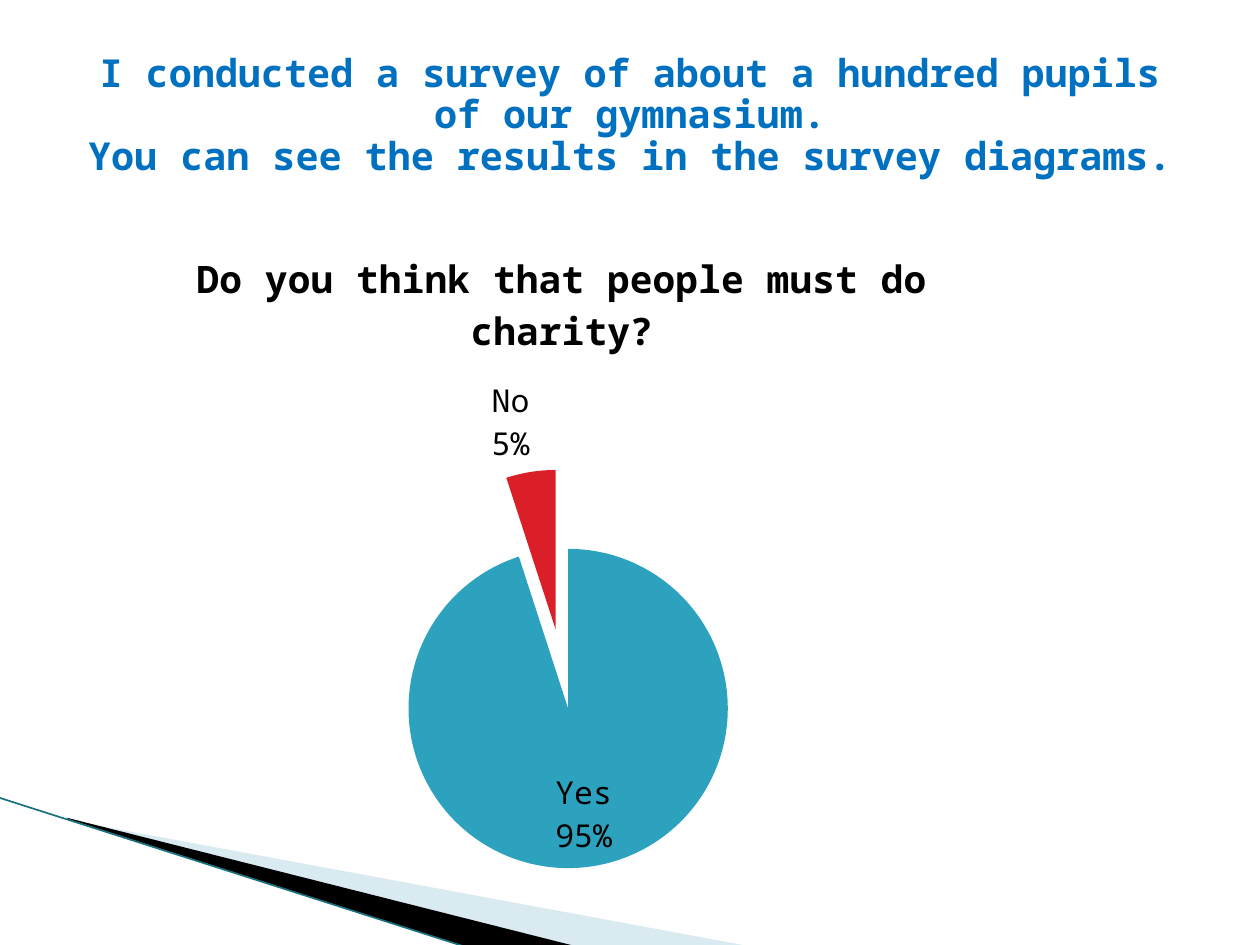
from dataclasses import dataclass
from typing import Optional

from lxml.etree import SubElement
from pptx import Presentation
from pptx.chart.data import CategoryChartData
from pptx.dml.color import RGBColor
from pptx.enum.chart import XL_CHART_TYPE, XL_LABEL_POSITION
from pptx.enum.shapes import MSO_CONNECTOR
from pptx.enum.text import MSO_ANCHOR, PP_ALIGN
from pptx.oxml import parse_xml
from pptx.oxml.ns import nsdecls, qn
from pptx.util import Inches, Pt


@dataclass(frozen=True)
class Theme:
    font: str = "Noto Sans Mono"
    title: str = "0070C0"
    text: str = "000000"
    yes: str = "2DA2BF"
    no: str = "DA1F28"
    pale: str = "A0CBDC"
    edge: str = "1B7080"
    title_size: float = 22
    chart_title_size: float = 21.6
    label_size: float = 18


@dataclass(frozen=True)
class Wedge:
    points: tuple
    color: str
    opacity: Optional[int] = None  # percent


THEME = Theme()
WEDGES = (
    Wedge(((0.55, 6.51), (5.95, 7.51), (4.56, 7.51), (0.55, 6.5)), THEME.pale, 40),
    Wedge(((0.53, 6.49), (4.57, 7.51), (3.72, 7.52), (0.54, 6.5)), THEME.text),
)


def rgb(color: str) -> RGBColor:
    return RGBColor.from_string(color)


def set_font(font, size: float, color: str, bold: bool = False) -> None:
    font.name, font.size, font.bold = THEME.font, Pt(size), bold
    font.color.rgb = rgb(color)


def add_wedge(slide, wedge: Wedge) -> None:
    start, *rest = [(Inches(x), Inches(y)) for x, y in wedge.points]
    builder = slide.shapes.build_freeform(*start)
    builder.add_line_segments(rest, close=True)
    sp = builder.convert_to_shape()
    sp.shadow.inherit = False
    sp.fill.solid()
    sp.fill.fore_color.rgb = rgb(wedge.color)
    sp.line.fill.background()
    if wedge.opacity is not None:
        clr = sp.fill._xPr.find(".//" + qn("a:srgbClr"))
        SubElement(clr, qn("a:alpha"), val=str(wedge.opacity * 1000))


def add_edge(slide) -> None:
    line = slide.shapes.add_connector(
        MSO_CONNECTOR.STRAIGHT, Inches(-0.01), Inches(6.33), Inches(3.71), Inches(7.52))
    line.line.color.rgb = rgb(THEME.edge)
    line.line.width = Pt(0.95)
    SubElement(line._element.spPr, qn("a:effectLst"))


def add_title(slide, text: str) -> None:
    title = slide.shapes.title
    title.left, title.top = Inches(0.5), Inches(0.3)
    title.width, title.height = Inches(9), Inches(1.25)
    tf = title.text_frame
    tf.text = text
    tf.word_wrap = True
    tf.vertical_anchor = MSO_ANCHOR.MIDDLE
    p = tf.paragraphs[0]
    p.alignment = PP_ALIGN.CENTER
    p.line_spacing = 0.9
    set_font(p.font, THEME.title_size, THEME.title, bold=True)


def add_pie(slide, question: str, answers: dict, colors: tuple) -> None:
    data = CategoryChartData()
    data.categories = list(answers)
    data.add_series("Series 1", list(answers.values()))
    chart = slide.shapes.add_chart(
        XL_CHART_TYPE.PIE, Inches(0.5), Inches(1.76), Inches(7.92), Inches(5.3), data).chart
    set_font(chart.font, THEME.label_size, THEME.text)
    chart.has_legend = False
    chart.has_title = True
    chart.chart_title.include_in_layout = False
    tf = chart.chart_title.text_frame
    tf.text = question
    set_font(tf.paragraphs[0].font, THEME.chart_title_size, THEME.text, bold=True)

    # Slices, pulled apart
    plot = chart.plots[0]
    plot.vary_by_categories = True
    series = plot.series[0]
    for i, color in enumerate(colors):
        fill = series.points[i].format.fill
        fill.solid()
        fill.fore_color.rgb = rgb(color)
    series._element.find(qn("c:dPt")).addprevious(
        parse_xml(f'<c:explosion {nsdecls("c")} val="25"/>'))

    # Labels with the answer above its share
    labels = series.data_labels
    labels.show_value = False
    labels.show_category_name = labels.show_percentage = True
    labels.position = XL_LABEL_POSITION.BEST_FIT
    set_font(labels.font, THEME.label_size, THEME.text)
    labels._element.find(qn("c:showBubbleSize")).addnext(
        parse_xml(f'<c:separator {nsdecls("c")}>\n</c:separator>'))

    # Plot area as fractions of the chart
    area = chart._chartSpace.chart.plotArea
    for old in area.findall(qn("c:layout")):
        area.remove(old)
    box = {"x": 0.3, "y": 0.37, "w": 0.4, "h": 0.6}
    sizes = "".join(f'<c:{key} val="{val}"/>' for key, val in box.items())
    area.insert(0, parse_xml(
        f'<c:layout {nsdecls("c")}><c:manualLayout><c:layoutTarget val="inner"/>'
        f'<c:xMode val="edge"/><c:yMode val="edge"/>{sizes}</c:manualLayout></c:layout>'))


def main() -> None:
    prs = Presentation()
    prs.slide_width, prs.slide_height = Inches(10), Inches(7.5)
    slide = prs.slides.add_slide(prs.slide_layouts[5])

    # Corner decoration
    for wedge in WEDGES:
        add_wedge(slide, wedge)
    add_edge(slide)

    # Title and survey result
    add_title(slide, "I conducted a survey of about a hundred pupils of our gymnasium.\v"
                     "You can see the results in the survey diagrams.")
    add_pie(slide, "Do you think that people must do charity?",
            {"Yes": 95, "No": 5}, (THEME.yes, THEME.no))
    prs.save("out.pptx")


if __name__ == "__main__":
    main()
